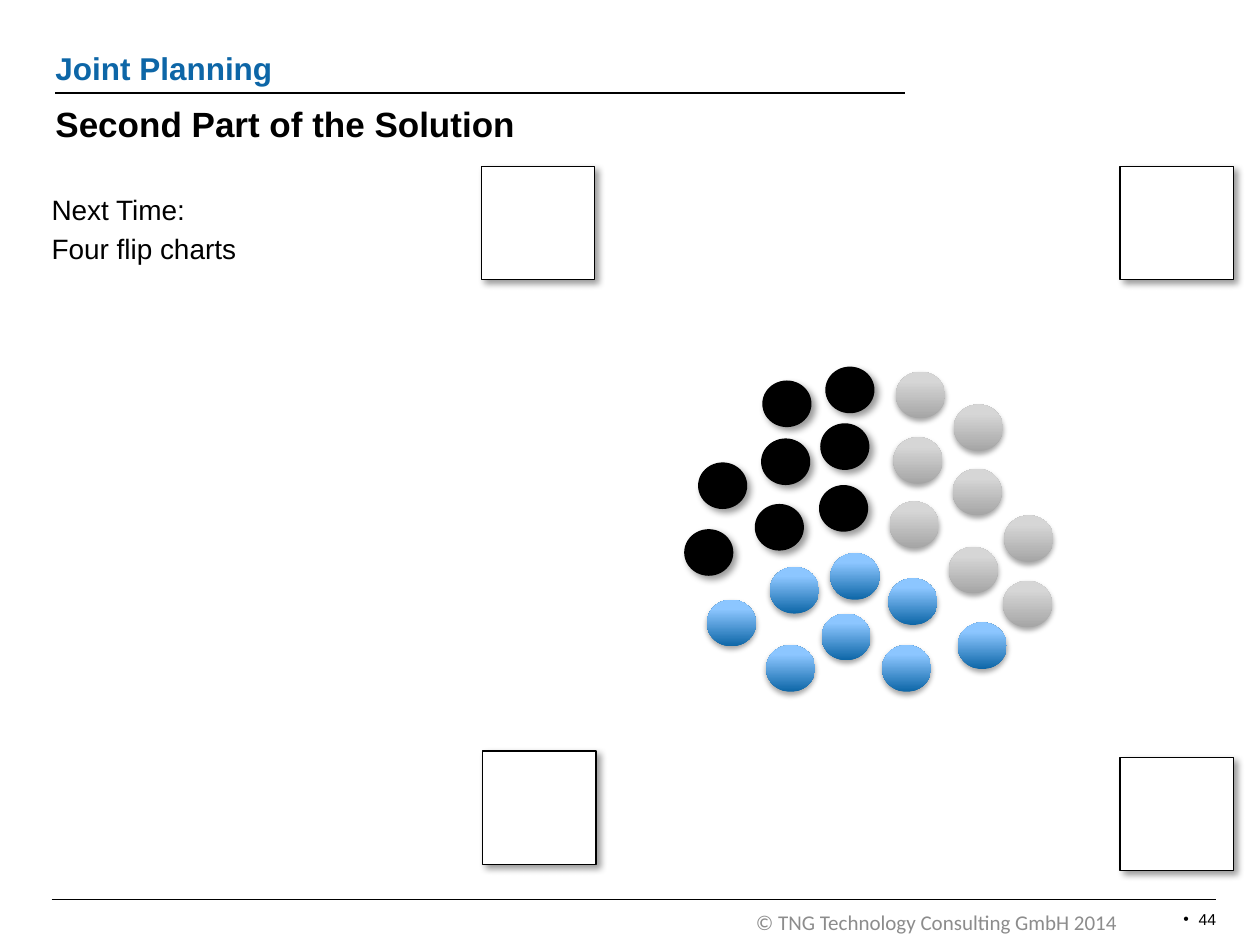
from copy import deepcopy

from lxml import etree
from pptx import Presentation
from pptx.dml.color import RGBColor
from pptx.enum.shapes import MSO_CONNECTOR, MSO_SHAPE
from pptx.enum.text import MSO_ANCHOR, PP_ALIGN
from pptx.oxml.ns import qn
from pptx.util import Inches, Pt

LINE = MSO_CONNECTOR.STRAIGHT
OVAL = MSO_SHAPE.OVAL
RECT = MSO_SHAPE.RECTANGLE
TOP = MSO_ANCHOR.TOP
BOTTOM = MSO_ANCHOR.BOTTOM
LEFT = PP_ALIGN.LEFT
RIGHT = PP_ALIGN.RIGHT

BLACK = RGBColor(0x00, 0x00, 0x00)
WHITE = RGBColor(0xFF, 0xFF, 0xFF)
BLUE = RGBColor(0x0D, 0x66, 0xA7)
SKY = RGBColor(0x8C, 0xC6, 0xFF)
PALE = RGBColor(0x8E, 0xC7, 0xFF)
GRAY = RGBColor(0xA5, 0xA5, 0xA5)
SILVER = RGBColor(0xD6, 0xD6, 0xD6)
MIST = RGBColor(0xD7, 0xD7, 0xD7)
STONE = RGBColor(0x8C, 0x8C, 0x8C)

STOPS = (0, 0.8, 1)
SOFT = {"blur": 3.1, "dist": 1.8, "angle": 90, "alpha": 35}
HARD = {"blur": 4, "dist": 3, "angle": 45, "alpha": 40}

DOTS = [
    ((BLUE, SKY, PALE), SOFT, [
        (6.59, 4.39), (7.05, 4.59), (7.6, 4.94), (7, 5.12),
        (6.08, 5.12), (5.61, 4.76), (6.11, 4.5), (6.52, 4.87)]),
    ((BLACK,), HARD, [
        (6.55, 2.91), (5.54, 3.67), (5.43, 4.2), (5.99, 4),
        (6.5, 3.85), (6.04, 3.48), (6.05, 3.02), (6.51, 3.36)]),
    ((GRAY, SILVER, MIST), SOFT, [
        (7.57, 3.21), (7.09, 3.47), (7.11, 2.95), (7.96, 4.61),
        (7.53, 4.34), (7.06, 3.98), (7.56, 3.72), (7.97, 4.09)]),
]
CHARTS = [(3.83, 5.96), (3.82, 1.32), (8.89, 6.01), (8.89, 1.32)]


class Deck:
    """Holds the text style and the current slide, and draws each kind of element."""

    def __init__(self):
        self.show = Presentation()
        self.show.slide_width = Inches(10)
        self.show.slide_height = Inches(7.5)
        self.slide = self.show.slides.add_slide(self.show.slide_layouts[6])
        self.style = {"name": "Arial", "size": Pt(16), "bold": False}

    def text(self, box, lines, color=BLACK, anchor=TOP, align=LEFT,
             inset=(0, 0), gap=0, bullet=False, **font):
        frame = self.slide.shapes.add_textbox(*map(Inches, box)).text_frame
        side, edge = map(Inches, inset)
        form = {"word_wrap": True, "vertical_anchor": anchor,
                "margin_left": side, "margin_right": side,
                "margin_top": edge, "margin_bottom": edge}
        for key, value in form.items():
            setattr(frame, key, value)
        for i, line in enumerate(lines):
            para = frame.paragraphs[0] if i == 0 else frame.add_paragraph()
            para.alignment = align
            if i:
                para.space_before = Pt(gap)
            if bullet:
                props = para._p.get_or_add_pPr()
                props.set("marL", str(Inches(0.12)))
                props.set("indent", str(-Inches(0.12)))
                etree.SubElement(props, qn("a:buFont"), typeface="Arial")
                etree.SubElement(props, qn("a:buChar"), char="•")
            run = para.add_run()
            run.text = line
            for key, value in {**self.style, **font}.items():
                setattr(run.font, key, value)
            run.font.color.rgb = color

    def rule(self, left, right, y):
        ends = map(Inches, (left, y, right, y))
        line = self.slide.shapes.add_connector(LINE, *ends)
        line.line.color.rgb = BLACK
        line.line.width = Pt(1)
        etree.SubElement(line._element.spPr, qn("a:effectLst"))

    def shade(self, shape, blur, dist, angle, alpha):
        shape.shadow.inherit = False
        effects = shape._element.spPr.find(qn("a:effectLst"))
        outer = etree.SubElement(
            effects, qn("a:outerShdw"), blurRad=str(Pt(blur)),
            dist=str(Pt(dist)), dir=str(angle * 60000), rotWithShape="0")
        color = etree.SubElement(outer, qn("a:srgbClr"), val=str(BLACK))
        etree.SubElement(color, qn("a:alpha"), val=str(alpha * 1000))

    def blend(self, shape, colors):
        shape.fill.gradient()
        shape.fill.gradient_angle = 90
        stops = shape._element.spPr.find(qn("a:gradFill")).find(qn("a:gsLst"))
        stops.append(deepcopy(stops[-1]))
        for stop, place, color in zip(shape.fill.gradient_stops, STOPS, colors):
            stop.position = place
            stop.color.rgb = color

    def shape(self, kind, box, colors, shadow, edge=None):
        shape = self.slide.shapes.add_shape(kind, *map(Inches, box))
        if len(colors) > 1:
            self.blend(shape, colors)
        else:
            shape.fill.solid()
            shape.fill.fore_color.rgb = colors[0]
        if edge is None:
            shape.line.fill.background()
        else:
            shape.line.color.rgb = edge
            shape.line.width = Pt(0.75)
        self.shade(shape, **shadow)


def main():
    deck = Deck()
    deck.rule(0.41, 9.65, 7.14)
    deck.rule(0.44, 7.18, 0.74)
    deck.text((6, 7.22, 3.26, 0.2), ["© TNG Technology Consulting GmbH 2014"],
              color=STONE, name="Calibri", size=Pt(12))
    deck.text((9.28, 7.17, 0.47, 0.25), ["44"], align=RIGHT,
              inset=(0.1, 0.05), bullet=True, size=Pt(9))
    deck.text((0.44, 0.81, 6.77, 0.34), ["Second Part of the Solution"],
              size=Pt(20), bold=True)
    deck.text((0.41, 1.53, 9.23, 0.59), ["Next Time:", "Four flip charts"], gap=3.2)
    deck.text((0.44, 0.39, 6.69, 0.3), ["Joint Planning"], color=BLUE,
              anchor=BOTTOM, size=Pt(18), bold=True)
    for colors, shadow, spots in DOTS:
        for spot in spots:
            deck.shape(OVAL, (*spot, 0.39, 0.37), colors, shadow)
    for spot in CHARTS:
        deck.shape(RECT, (*spot, 0.9, 0.9), (WHITE,), HARD, BLACK)
    deck.show.save("out.pptx")


if __name__ == "__main__":
    main()
